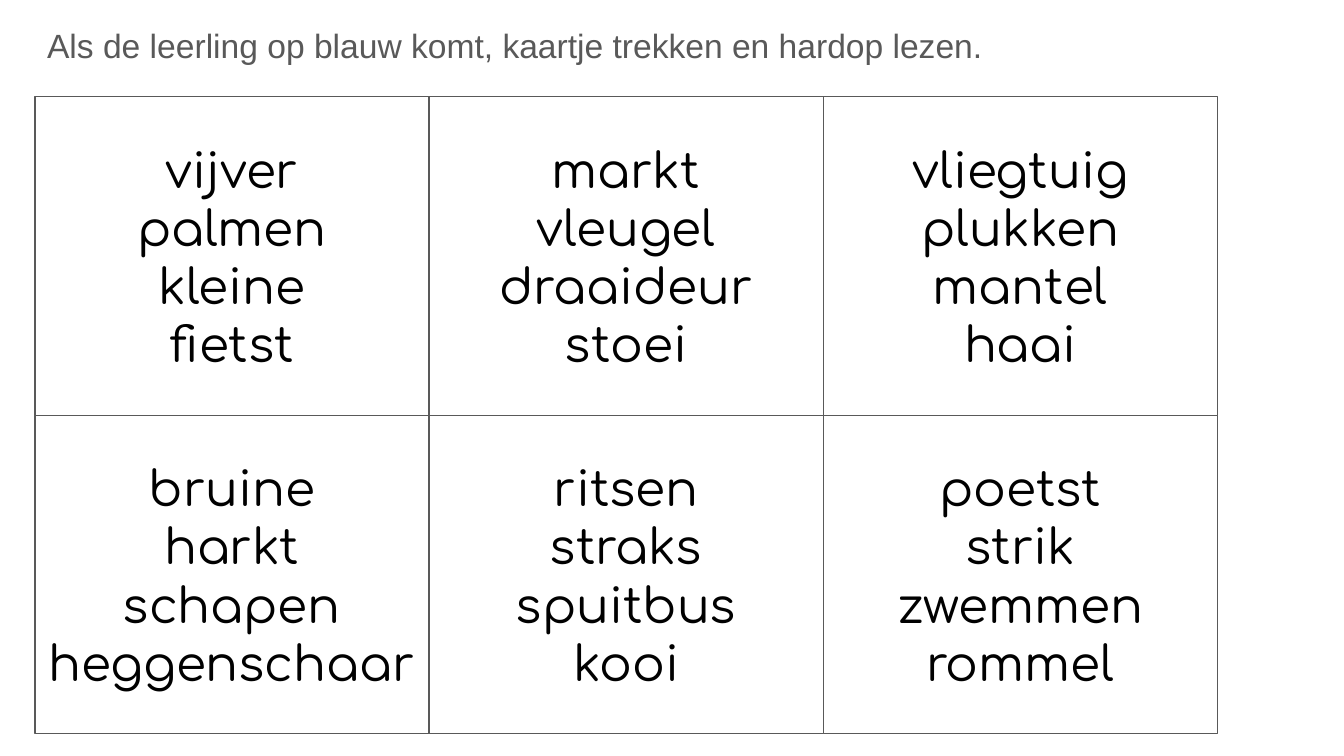
import pptx
import pptx.util
import pptx.dml.color
import pptx.enum.shapes
import pptx.enum.text

Cm, Pt = pptx.util.Cm, pptx.util.Pt
ALIGN = pptx.enum.text.PP_ALIGN
ANCHOR = pptx.enum.text.MSO_ANCHOR

COLORS = {"paper": "FFFFFF", "grey": "595959", "ink": "000000"}

# Words on the cards, row by row
WORDS = [
    ["vijver palmen kleine fietst",
     "markt vleugel draaideur stoei",
     "vliegtuig plukken mantel haai"],
    ["bruine harkt schapen heggenschaar",
     "ritsen straks spuitbus kooi",
     "poetst strik zwemmen rommel"],
]

# Card grid in cm
LEFT, TOP = 0.66, 1.83
WIDTH, HEIGHT = 7.45, 6.02


class Deck:
    """Style and current slide."""

    def __init__(self, slide):
        self.slide = slide

    def color(self, name):
        return pptx.dml.color.RGBColor.from_string(COLORS[name])

    def label(self, shape, lines, font, size, color, align, anchor):
        frame = shape.text_frame
        frame.text = "\n".join(lines)
        frame.word_wrap = True
        frame.auto_size = pptx.enum.text.MSO_AUTO_SIZE.NONE
        frame.vertical_anchor = anchor
        frame.margin_left = frame.margin_right = Cm(0.25)
        frame.margin_top = frame.margin_bottom = Cm(0.25)
        for par in frame.paragraphs:
            par.alignment = align
            par.font.name = font
            par.font.size = Pt(size)
            par.font.color.rgb = self.color(color)

    def title(self, text, x, y, w, h):
        shape = self.slide.shapes.title
        shape.left, shape.top = Cm(x), Cm(y)
        shape.width, shape.height = Cm(w), Cm(h)
        self.label(shape, [text], "Arial", 18, "grey", ALIGN.LEFT, ANCHOR.TOP)

    def card(self, words, x, y, w, h):
        shape = self.slide.shapes.add_shape(
            pptx.enum.shapes.MSO_SHAPE.RECTANGLE, Cm(x), Cm(y), Cm(w), Cm(h))
        shape.shadow.inherit = False
        shape.fill.solid()
        shape.fill.fore_color.rgb = self.color("paper")
        shape.line.color.rgb = self.color("grey")
        shape.line.width = Pt(0.75)
        self.label(shape, words, "Comfortaa", 26, "ink",
                   ALIGN.CENTER, ANCHOR.MIDDLE)


def main():
    prs = pptx.Presentation()
    prs.slide_width, prs.slide_height = Cm(25.4), Cm(14.29)
    deck = Deck(prs.slides.add_slide(prs.slide_layouts[5]))

    # Instruction above the cards
    deck.title("Als de leerling op blauw komt, kaartje trekken en hardop lezen.",
               0.64, 0.23, 22.4, 1.37)

    # Word cards
    for row, cards in enumerate(WORDS):
        for col, words in enumerate(cards):
            deck.card(words.split(), LEFT + col * WIDTH, TOP + row * HEIGHT,
                      WIDTH, HEIGHT)

    prs.save("out.pptx")


if __name__ == "__main__":
    main()
